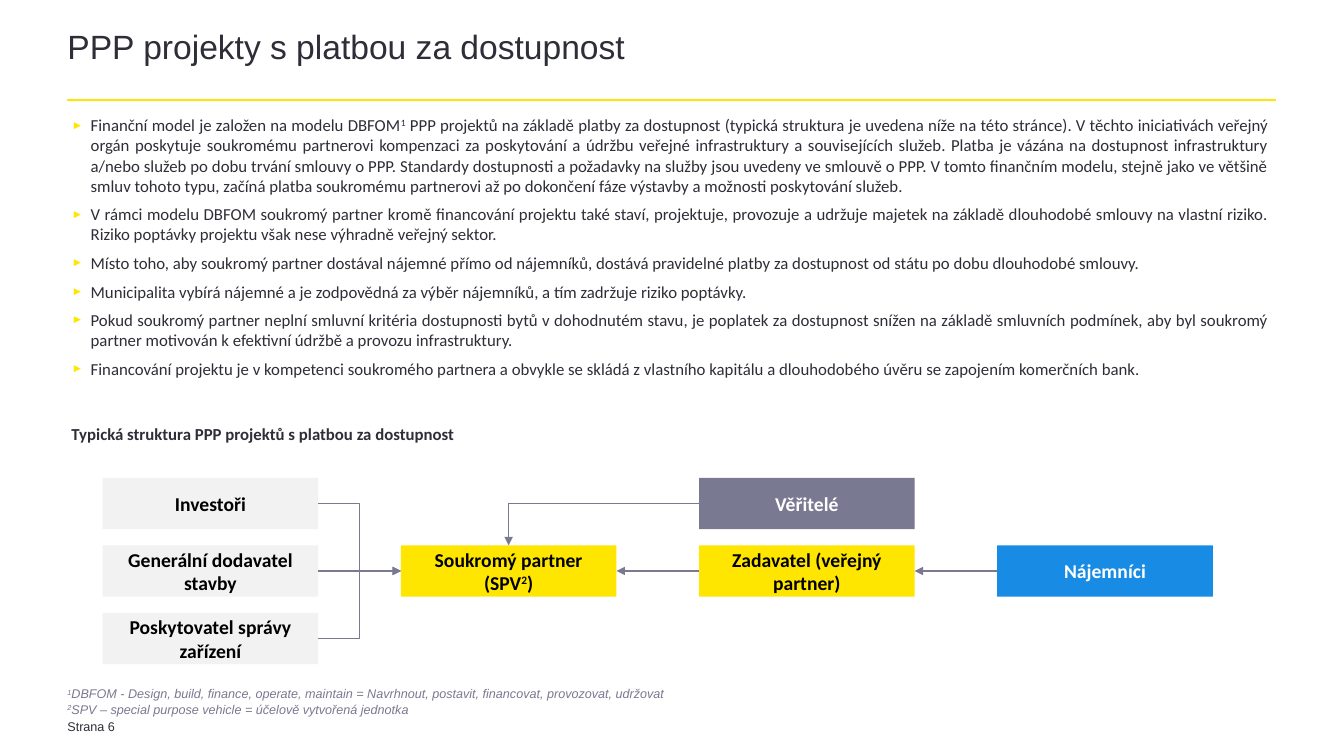
"""Build the slide on PPP projects with availability payments."""
from lxml import etree
from pptx import Presentation
from pptx.dml.color import RGBColor
from pptx.enum import shapes, text
from pptx.oxml import ns
from pptx.util import Pt

DARK, GREY, GOLD = "2E2E38", "797991", "FFE600"
PALE, BLUE, BLACK, WHITE = "F2F2F2", "188CE5", "000000", "FFFFFF"
LEFT, MID = text.PP_ALIGN.LEFT, text.PP_ALIGN.CENTER
JUST = text.PP_ALIGN.JUSTIFY

TITLE = "PPP projekty s platbou za dostupnost"
POINTS = [
    "Finanční model je založen na modelu DBFOM^1^ PPP projektů na základě platby za dostupnost (typická struktura je uvedena níže na této stránce). V těchto iniciativách veřejný orgán poskytuje soukromému partnerovi kompenzaci za poskytování a údržbu veřejné infrastruktury a souvisejících služeb. Platba je vázána na dostupnost infrastruktury a/nebo služeb po dobu trvání smlouvy o PPP. Standardy dostupnosti a požadavky na služby jsou uvedeny ve smlouvě o PPP. V tomto finančním modelu, stejně jako ve většině smluv tohoto typu, začíná platba soukromému partnerovi až po dokončení fáze výstavby a možnosti poskytování služeb.",
    "V rámci modelu DBFOM soukromý partner kromě financování projektu také staví, projektuje, provozuje a udržuje majetek na základě dlouhodobé smlouvy na vlastní riziko. Riziko poptávky projektu však nese výhradně veřejný sektor.",
    "Místo toho, aby soukromý partner dostával nájemné přímo od nájemníků, dostává pravidelné platby za dostupnost od státu po dobu dlouhodobé smlouvy.",
    "Municipalita vybírá nájemné a je zodpovědná za výběr nájemníků, a tím zadržuje riziko poptávky.",
    "Pokud soukromý partner neplní smluvní kritéria dostupnosti bytů v dohodnutém stavu, je poplatek za dostupnost snížen na základě smluvních podmínek, aby byl soukromý partner motivován k efektivní údržbě a provozu infrastruktury.",
    "Financování projektu je v kompetenci soukromého partnera a obvykle se skládá z vlastního kapitálu a dlouhodobého úvěru se zapojením komerčních bank.",
]
HEAD = "Typická struktura PPP projektů s platbou za dostupnost"
NOTES = [
    "^1^DBFOM - Design, build, finance, operate, maintain = Navrhnout, postavit, financovat, provozovat, udržovat",
    "^2^SPV – special purpose vehicle = účelově vytvořená jednotka",
]
PAGE = "Strana 6"

# name: (label, column, row, fill, ink)
BOXES = {
    "fund": ("Investoři", 0, 0, PALE, BLACK),
    "build": ("Generální dodavatel stavby", 0, 1, PALE, BLACK),
    "care": ("Poskytovatel správy zařízení", 0, 2, PALE, BLACK),
    "spv": ("Soukromý partner (SPV^2^)", 1, 1, GOLD, BLACK),
    "bank": ("Věřitelé", 2, 0, GREY, WHITE),
    "state": ("Zadavatel (veřejný partner)", 2, 1, GOLD, BLACK),
    "rent": ("Nájemníci", 3, 1, BLUE, WHITE),
}
TOP, WEST, EAST = 0, 1, 3
LINKS = [
    ("fund", EAST, "spv", WEST, "bentConnector3"),
    ("build", EAST, "spv", WEST, "line"),
    ("care", EAST, "spv", WEST, "bentConnector3"),
    ("state", WEST, "spv", EAST, "line"),
    ("rent", WEST, "state", EAST, "line"),
    ("bank", WEST, "spv", TOP, "bentConnector2"),
]
GRID_X, GRID_Y, STEP_X, STEP_Y = 73.4, 341.3, 213.1, 48.2
BOX_W, BOX_H = 154.1, 36.7


def color(code):
    """Turn a hex string into a colour."""
    return RGBColor.from_string(code)


def apply(item, **form):
    """Set every attribute named in the format."""
    for key, val in form.items():
        setattr(item, key, val)


def place(shape, x, y, w, h):
    """Move and size a shape in points."""
    apply(shape, left=Pt(x), top=Pt(y), width=Pt(w), height=Pt(h))


def write(shape, lines, ink, look, para, pad=(0, 0, 0, 0),
          anchor=text.MSO_ANCHOR.TOP, gap=0):
    """Fill a shape with paragraphs, raising text between carets."""
    frame = shape.text_frame
    sides = ("margin_left", "margin_top", "margin_right", "margin_bottom")
    apply(frame, word_wrap=True, auto_size=text.MSO_AUTO_SIZE.NONE,
          vertical_anchor=anchor, **{s: Pt(p) for s, p in zip(sides, pad)})
    for i, line in enumerate(lines):
        par = frame.add_paragraph() if i else frame.paragraphs[0]
        apply(par, space_before=Pt(gap if i else 0), **para)
        for j, part in enumerate(line.split("^")):
            if part:
                run = par.add_run()
                run.text = part
                apply(run.font, **look)
                run.font.color.rgb = color(ink)
                if j % 2:
                    run._r.get_or_add_rPr().set("baseline", "30000")


def bullet(par):
    """Give a paragraph a hanging gold arrow bullet."""
    prop = par._p.get_or_add_pPr()
    prop.set("marL", str(Pt(13.7)))
    prop.set("indent", str(-Pt(13.7)))
    tint = etree.SubElement(prop, ns.qn("a:buClr"))
    etree.SubElement(tint, ns.qn("a:srgbClr"), val=GOLD)
    etree.SubElement(prop, ns.qn("a:buSzPct"), val="70000")
    etree.SubElement(prop, ns.qn("a:buFont"), typeface="Arial")
    etree.SubElement(prop, ns.qn("a:buChar"), char="►")


def stroke(slide, ends, ink, width, kind="line", head=False):
    """Draw a flat connector between two points."""
    style = shapes.MSO_CONNECTOR
    form = style.STRAIGHT if kind == "line" else style.ELBOW
    wire = slide.shapes.add_connector(form, *map(Pt, ends))
    wire.line.width = Pt(width)
    wire.line.color.rgb = color(ink)
    prop = wire._element.spPr
    prop.find(ns.qn("a:prstGeom")).set("prst", kind)
    if head:
        etree.SubElement(prop.find(ns.qn("a:ln")), ns.qn("a:tailEnd"),
                         type="triangle")
    etree.SubElement(prop, ns.qn("a:effectLst"))
    return wire


def label(slide, spot, lines, ink, look, para, pad=(0, 0, 0, 0)):
    """Add a text box."""
    box = slide.shapes.add_textbox(0, 0, 0, 0)
    place(box, *spot)
    write(box, lines, ink, look, para, pad)


def chart(slide):
    """Draw the structure boxes and the arrows that join them."""
    made = {}
    for name, (words, col, row, fill, ink) in BOXES.items():
        box = slide.shapes.add_shape(shapes.MSO_SHAPE.RECTANGLE, 0, 0, 0, 0)
        place(box, GRID_X + col * STEP_X, GRID_Y + row * STEP_Y, BOX_W, BOX_H)
        box.shadow.inherit = False
        box.fill.solid()
        box.fill.fore_color.rgb = color(fill)
        box.line.fill.background()
        write(box, [words], ink, dict(name="Calibri", size=Pt(14), bold=True),
              dict(alignment=MID), (7.2, 3.6, 7.2, 3.6),
              text.MSO_ANCHOR.MIDDLE)
        made[name] = box
    for start, out, stop, into, kind in LINKS:
        wire = stroke(slide, (0, 0, 0, 0), GREY, 0.75, kind, True)
        wire.begin_connect(made[start], out)
        wire.end_connect(made[stop], into)


def main():
    """Assemble and save the slide."""
    deck = Presentation()
    apply(deck, slide_width=Pt(960.5), slide_height=Pt(540))
    slide = deck.slides.add_slide(deck.slide_layouts[1])
    title, body = slide.placeholders
    place(title, 48.2, 23, 864.7, 46.8)
    write(title, [TITLE], DARK, dict(name="Arial", size=Pt(24)),
          dict(alignment=LEFT, line_spacing=0.85))
    place(body, 51.1, 82.1, 864.7, 204.5)
    write(body, POINTS, DARK, dict(name="Calibri", size=Pt(12)),
          dict(alignment=JUST), (0, 0, 8.6, 0), gap=6)
    for par in body.text_frame.paragraphs:
        bullet(par)
    stroke(slide, (48.2, 71.3, 912.2, 71.3), GOLD, 1.5)
    label(slide, (51.1, 302.4, 429.1, 20.9), [HEAD], DARK,
          dict(name="Calibri", size=Pt(12), bold=True), dict(alignment=LEFT))
    chart(slide)
    label(slide, (48.2, 487.4, 483.1, 24.5), NOTES, GREY,
          dict(name="Arial", size=Pt(9), italic=True),
          dict(alignment=LEFT), (0, 2.9, 0, 0))
    label(slide, (48.2, 512.6, 72, 12.2), [PAGE], DARK,
          dict(name="Arial", size=Pt(9)),
          dict(alignment=LEFT, line_spacing=0.85), (0, 2.9, 0, 0))
    deck.save("out.pptx")


if __name__ == "__main__":
    main()
